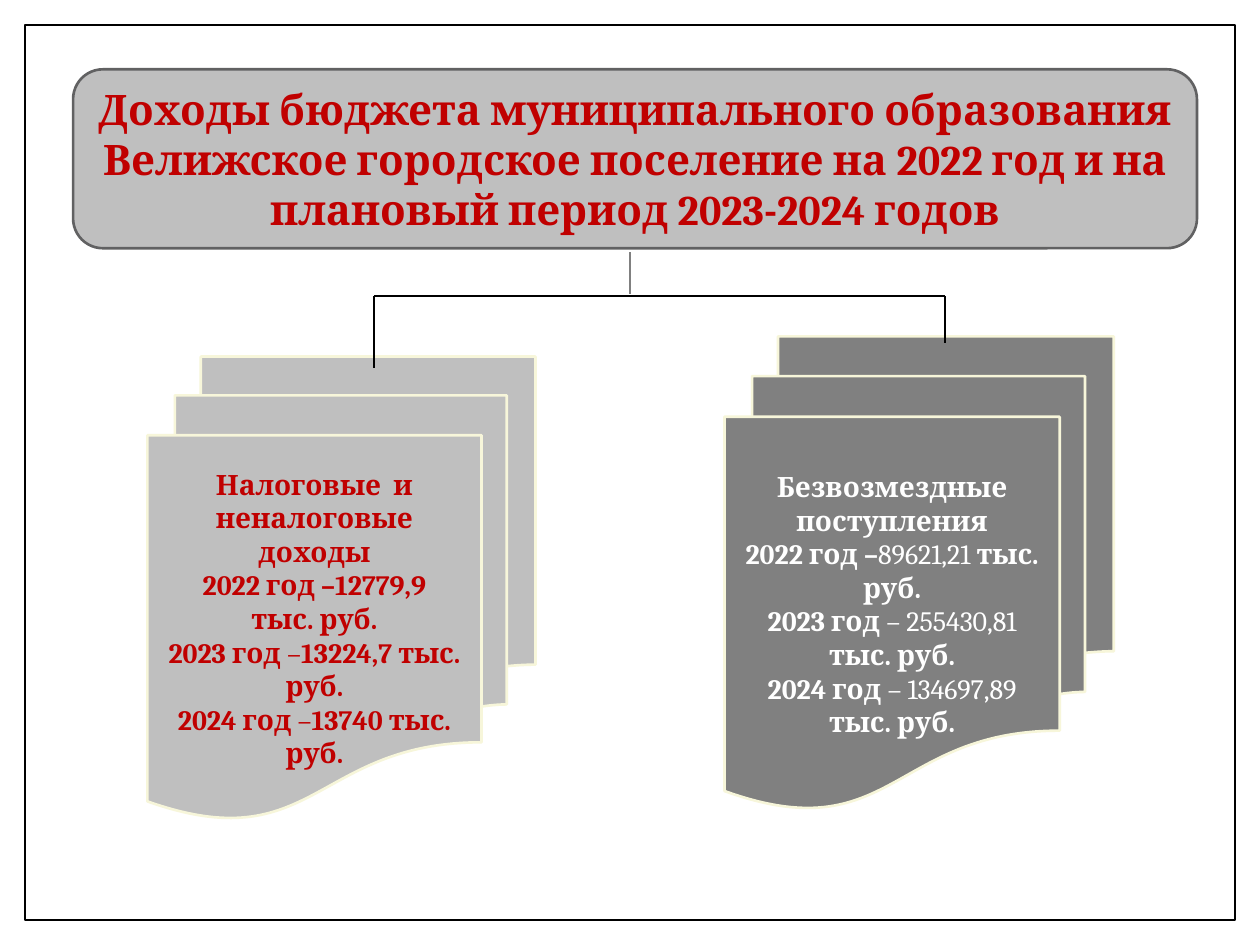
from lxml.etree import SubElement
from pptx import Presentation
from pptx.dml.color import RGBColor
from pptx.enum.shapes import MSO_CONNECTOR as Connector, MSO_SHAPE as Shape
from pptx.enum.text import MSO_ANCHOR as Anchor, PP_ALIGN as Align
from pptx.oxml.ns import qn
from pptx.util import Pt

EMU_PER_PX = 9144  # 100 px to the inch
FONT = "Cambria"
BLACK, WHITE, RED = "000000", "FFFFFF", "C00000"
SILVER, GRAY, CREAM, DARK_GRAY = "BFBFBF", "808080", "F7F6DA", "616162"


def px(*lengths):
    return [length * EMU_PER_PX for length in lengths]


def color(hex_code):
    return RGBColor.from_string(hex_code)


def add_box(slide, kind, box, fill, line, width):
    shape = slide.shapes.add_shape(kind, *px(*box))
    shape.shadow.inherit = False
    shape.fill.solid()
    shape.fill.fore_color.rgb = color(fill)
    shape.line.color.rgb = color(line)
    shape.line.width = Pt(width)
    return shape


def add_line(slide, start, end, line=BLACK):
    connector = slide.shapes.add_connector(Connector.STRAIGHT, *px(*start, *end))
    connector.line.color.rgb = color(line)
    connector.line.width = Pt(0.79)
    SubElement(connector._element.spPr, qn("a:effectLst"))


def write(shape, paragraphs, size, text_color):
    """Each paragraph is a list of runs: bold, regular, bold."""
    frame = shape.text_frame
    frame.word_wrap = True
    frame.vertical_anchor = Anchor.MIDDLE
    for index, runs in enumerate(paragraphs):
        paragraph = frame.paragraphs[0] if index == 0 else frame.add_paragraph()
        paragraph.alignment = Align.CENTER
        paragraph.font.name = FONT
        paragraph.font.size = Pt(size)
        paragraph.font.color.rgb = color(text_color)
        for position, text in enumerate(runs):
            run = paragraph.add_run()
            run.text = text
            run.font.bold = position % 2 == 0


def add_title(slide, box, text):
    shape = add_box(slide, Shape.ROUNDED_RECTANGLE, box, SILVER, DARK_GRAY, 1.5)
    write(shape, [[text]], 24, RED)


def add_income_card(slide, box, fill, text_color, paragraphs):
    shape = add_box(slide, Shape.FLOWCHART_MULTIDOCUMENT, box, fill, CREAM, 1.5)
    write(shape, paragraphs, 16, text_color)


def add_branches(slide, box, stem_x, right_drop):
    """Stem from the title, a crossbar, and one drop to each card."""
    left, top, width, height = box
    right, bar = left + width, top + 35
    add_line(slide, (left, bar), (right, bar))
    add_line(slide, (left, bar), (left, top + height))
    add_line(slide, (right, bar), (right, bar + right_drop))
    add_line(slide, (stem_x, top), (stem_x, bar - 2), GRAY)


def main():
    presentation = Presentation()
    presentation.slide_width, presentation.slide_height = px(1000, 750)
    slide = presentation.slides.add_slide(presentation.slide_layouts[6])

    # Page frame
    add_box(slide, Shape.RECTANGLE, (20, 20, 960, 710), WHITE, BLACK, 1)

    # Title
    add_title(slide, (58, 55, 892, 142),
              "Доходы бюджета муниципального образования Велижское городское "
              "поселение на 2022 год и на плановый период 2023-2024 годов")

    # Income cards
    add_income_card(slide, (117, 283, 308, 367), SILVER, RED, [
        ["Налоговые  и неналоговые доходы"],
        ["2022 год –12779,9"],
        ["тыс. руб."],
        ["2023 год ", "–", "13224,7 тыс. руб."],
        ["2024 год ", "–", "13740 тыс. руб."],
    ])
    add_income_card(slide, (575, 267, 309, 375), GRAY, WHITE, [
        ["Безвозмездные поступления"],
        ["2022 год –", "89621,21 ", "тыс. руб."],
        ["2023 год ", "– 255430,81 ", "тыс. руб."],
        ["2024 год ", "– 134697,89 ", "тыс. руб."],
    ])

    # Lines from the title to the cards
    add_branches(slide, (297, 200, 453, 92), 500, 37)

    presentation.save("out.pptx")


if __name__ == "__main__":
    main()
